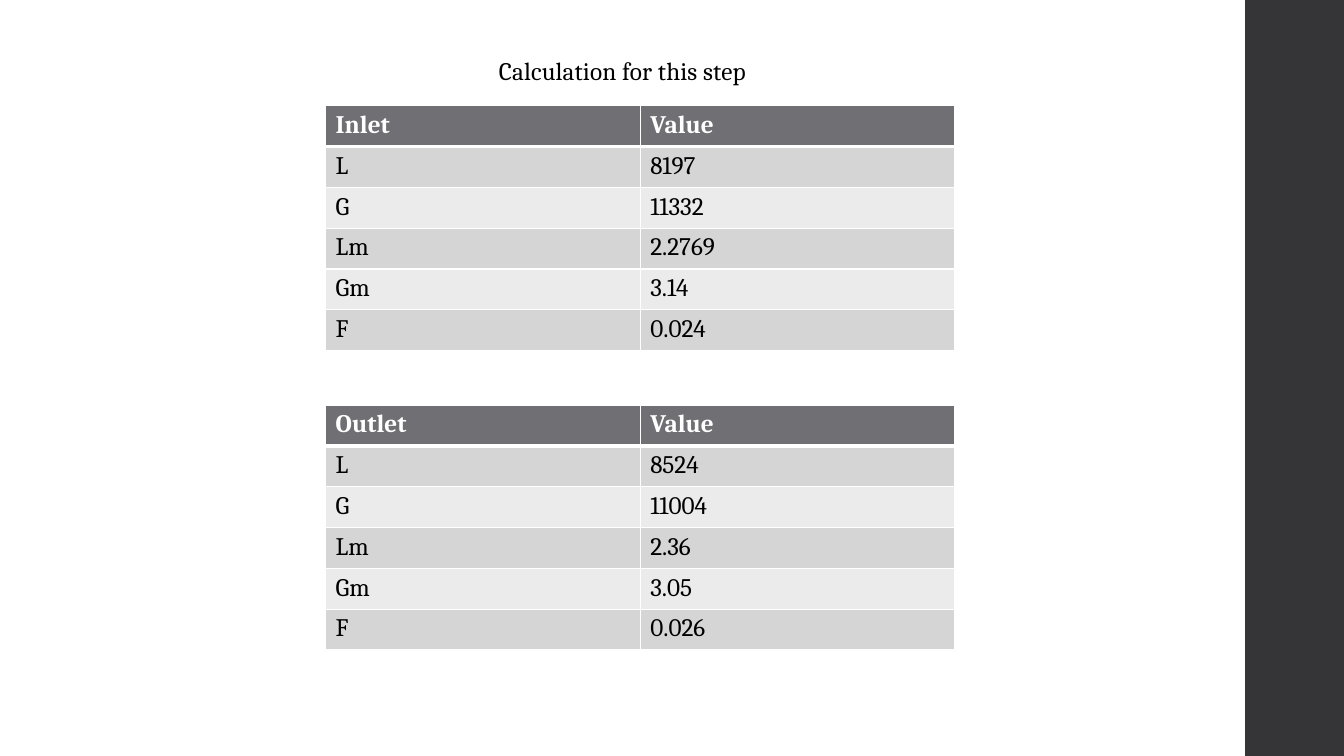
from pptx import Presentation
from pptx.dml.color import RGBColor
from pptx.enum.shapes import MSO_SHAPE
from pptx.enum.text import MSO_ANCHOR, PP_ALIGN
from pptx.oxml.ns import qn
from pptx.util import Inches, Pt
from lxml import etree

RECTANGLE = MSO_SHAPE.RECTANGLE
MIDDLE = MSO_ANCHOR.MIDDLE
CENTER = PP_ALIGN.CENTER

THEME = {
    "font": "Cambria",
    "size": Pt(18),
    "text": RGBColor.from_string("000000"),
    "header_text": RGBColor.from_string("FFFFFF"),
    "header": RGBColor.from_string("6F6F74"),
    "bands": [RGBColor.from_string("EBEBEB"), RGBColor.from_string("D5D5D6")],
    "sidebar": RGBColor.from_string("353537"),
    "border": "FFFFFF",
}

# Page grid
SLIDE_W, SLIDE_H = Inches(13.33), Inches(7.5)
CONTENT_W = Inches(12.35)
TABLE_LEFT, TABLE_W, TABLE_H = Inches(3.23), Inches(6.24), Inches(2.43)
FIRST_TOP, TABLE_STEP = Inches(1.05), Inches(2.97)

QUANTITIES = ["L", "G", "Lm", "Gm", "F"]
STREAMS = {
    "Inlet": ["8197", "11332", "2.2769", "3.14", "0.024"],
    "Outlet": ["8524", "11004", "2.36", "3.05", "0.026"],
}


def style_font(paragraph, color, bold=False):
    paragraph.font.name = THEME["font"]
    paragraph.font.size = THEME["size"]
    paragraph.font.color.rgb = color
    paragraph.font.bold = bold


def add_borders(cell, bottom):
    properties = cell._tc.get_or_add_tcPr()
    for side, width in (("L", Pt(1)), ("R", Pt(1)), ("T", Pt(1)), ("B", bottom)):
        line = etree.SubElement(properties, qn(f"a:ln{side}"), w=str(width))
        fill = etree.SubElement(line, qn("a:solidFill"))
        etree.SubElement(fill, qn("a:srgbClr"), val=THEME["border"])


prs = Presentation()
prs.slide_width, prs.slide_height = SLIDE_W, SLIDE_H
slide = prs.slides.add_slide(prs.slide_layouts[6])

# Dark sidebar
sidebar = slide.shapes.add_shape(RECTANGLE, CONTENT_W, 0, SLIDE_W - CONTENT_W, SLIDE_H)
sidebar.shadow.inherit = False
sidebar.fill.solid()
sidebar.fill.fore_color.rgb = THEME["sidebar"]
sidebar.line.fill.background()

# Caption
caption = slide.shapes.add_textbox(0, Inches(0.5), CONTENT_W, Inches(0.42)).text_frame
caption.word_wrap = True
caption.vertical_anchor = MIDDLE
caption_line = caption.paragraphs[0]
caption_line.text = "Calculation for this step"
caption_line.alignment = CENTER
caption_line.line_spacing = 0.95
style_font(caption_line, THEME["text"])
caption_line.runs[0]._r.get_or_add_rPr().set("spc", "10")

# Inlet and outlet tables
for position, (stream, values) in enumerate(STREAMS.items()):
    rows = [(stream, "Value"), *zip(QUANTITIES, values)]
    table = slide.shapes.add_table(
        len(rows), 2, TABLE_LEFT, FIRST_TOP + position * TABLE_STEP, TABLE_W, TABLE_H
    ).table
    for r, row in enumerate(rows):
        is_header = r == 0
        for c, content in enumerate(row):
            cell = table.cell(r, c)
            cell.text = content
            style_font(
                cell.text_frame.paragraphs[0],
                THEME["header_text"] if is_header else THEME["text"],
                is_header,
            )
            add_borders(cell, Pt(3) if is_header else Pt(1))
            cell.fill.solid()
            cell.fill.fore_color.rgb = THEME["header"] if is_header else THEME["bands"][r % 2]

prs.save("out.pptx")
